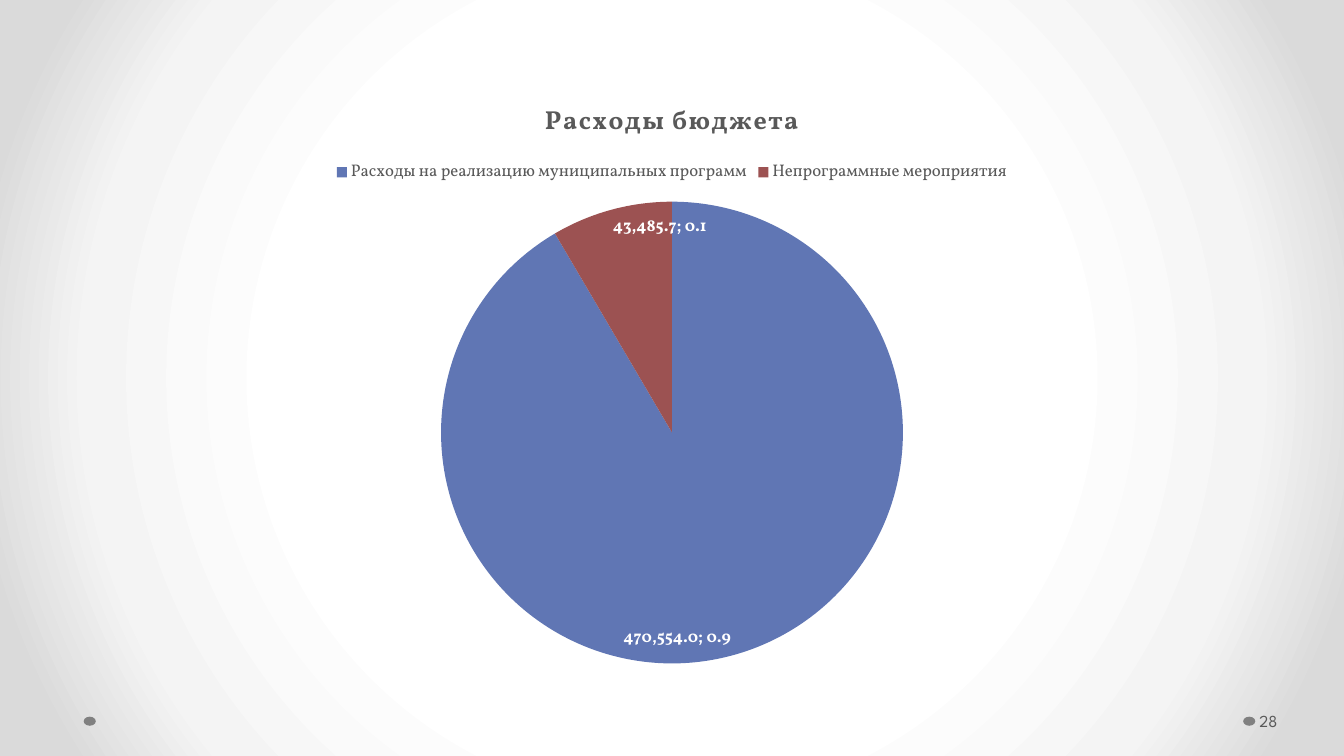
from lxml import etree
from pptx import Presentation
from pptx.chart.data import CategoryChartData
from pptx.dml.color import RGBColor
from pptx.enum.chart import XL_CHART_TYPE, XL_LABEL_POSITION as LabelPos, XL_LEGEND_POSITION as LegendPos
from pptx.enum.shapes import MSO_SHAPE
from pptx.enum.text import MSO_ANCHOR
from pptx.oxml import parse_xml
from pptx.oxml.ns import nsdecls, qn
from pptx.util import Inches, Pt

GRAY = RGBColor(0x59, 0x59, 0x59)
DOT_GRAY = RGBColor(0x80, 0x80, 0x80)
WHITE = RGBColor(0xFF, 0xFF, 0xFF)
BLACK = RGBColor(0, 0, 0)
BLUE = RGBColor(0x60, 0x76, 0xB4)
RED = RGBColor(0x9C, 0x52, 0x52)
BACKGROUND_STOPS = [(50, "FFFFFF"), (76, "F4F4F4"), (92, "DADADA")]
CHART_FONT = "Vollkorn"
NUMBER_FONT = "League Spartan"
TITLE = "Расходы бюджета"
EXPENSES = [
    ("Расходы на реализацию муниципальных программ", 470554, BLUE),
    ("Непрограммные мероприятия", 43485.7, RED),
]


def style_font(font, name, size, color, bold=False):
    font.name, font.size, font.bold = name, Pt(size), bold
    font.color.rgb = color


def paint_background(slide):
    """Fill the slide with a gradient that spreads in circles from its centre."""
    slide.background.fill.gradient()
    linear = next(slide.element.iter(qn("a:gradFill")))
    stops = "".join(
        f'<a:gs pos="{percent * 1000}"><a:srgbClr val="{color}"/></a:gs>'
        for percent, color in BACKGROUND_STOPS
    )
    radial = parse_xml(
        f'<a:gradFill {nsdecls("a")} rotWithShape="1"><a:gsLst>{stops}</a:gsLst>'
        '<a:path path="circle"><a:fillToRect l="50000" t="50000" r="50000" b="50000"/>'
        "</a:path></a:gradFill>"
    )
    linear.getparent().replace(linear, radial)


def add_footer(slide, left, top, width, number):
    """Place a dot at each end of the footer and the page number after the last."""
    for dot_left in (left, left + width):
        dot = slide.shapes.add_shape(
            MSO_SHAPE.OVAL, Inches(dot_left), Inches(top + 0.16), Inches(0.12), Inches(0.09)
        )
        dot.shadow.inherit = False
        dot.fill.solid()
        dot.fill.fore_color.rgb = DOT_GRAY
        dot.line.fill.background()

    page = slide.shapes.add_textbox(
        Inches(left + width + 0.13), Inches(top), Inches(0.82), Inches(0.4)
    ).text_frame
    page.word_wrap = True
    page.vertical_anchor = MSO_ANCHOR.MIDDLE
    page.margin_left = Inches(0.03)
    page.margin_right = Inches(0.05)
    page.text = number
    style_font(page.paragraphs[0].runs[0].font, NUMBER_FONT, 12, GRAY)


def add_expense_pie(slide, left, top, width, height):
    data = CategoryChartData(number_format="#,##0.0")
    data.categories = [category for category, _, _ in EXPENSES]
    data.add_series(TITLE, [amount for _, amount, _ in EXPENSES])
    chart = slide.shapes.add_chart(
        XL_CHART_TYPE.PIE, Inches(left), Inches(top), Inches(width), Inches(height), data
    ).chart
    style_font(chart.font, CHART_FONT, 10, BLACK)

    chart.has_title = True
    heading = chart.chart_title.text_frame
    heading.text = TITLE
    heading_font = heading.paragraphs[0].runs[0].font
    style_font(heading_font, CHART_FONT, 18.6, GRAY, bold=True)
    next(heading.paragraphs[0].runs[0]._r.iter(qn("a:rPr"))).set("spc", "100")

    chart.has_legend = True
    chart.legend.position = LegendPos.TOP
    chart.legend.include_in_layout = False
    style_font(chart.legend.font, CHART_FONT, 12, GRAY)

    pie = chart.plots[0]
    pie.vary_by_categories = True
    for index, (_, _, color) in enumerate(EXPENSES):
        slice_fill = pie.series[0].points[index].format.fill
        slice_fill.solid()
        slice_fill.fore_color.rgb = color

    pie.has_data_labels = True
    labels = pie.data_labels
    labels.show_value = labels.show_percentage = True
    labels.number_format, labels.number_format_is_linked = "#,##0.0", False
    labels.position = LabelPos.INSIDE_END
    style_font(labels.font, CHART_FONT, 12, WHITE, bold=True)
    separator = etree.Element(qn("c:separator"))
    separator.text = "; "
    next(chart.element.iter(qn("c:showBubbleSize"))).addnext(separator)


def main():
    deck = Presentation()
    deck.slide_width, deck.slide_height = Inches(13.33), Inches(7.5)
    slide = deck.slides.add_slide(deck.slide_layouts[6])
    paint_background(slide)
    add_footer(slide, 0.83, 6.95, 11.5, "28")
    add_expense_pie(slide, 2.22, 0.79, 8.89, 5.93)
    deck.save("out.pptx")


if __name__ == "__main__":
    main()
